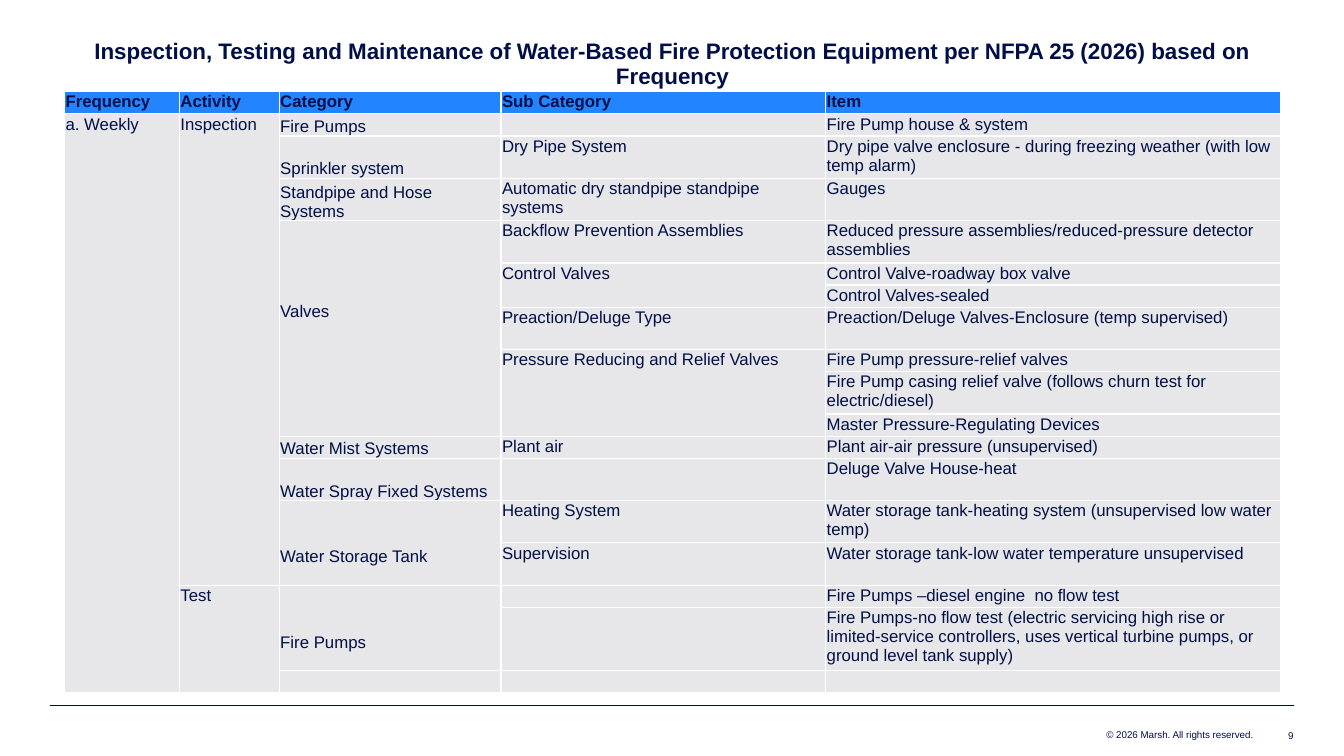
from lxml import etree
from pptx import Presentation
from pptx.dml.color import RGBColor
from pptx.enum.shapes import MSO_CONNECTOR
from pptx.enum.text import MSO_ANCHOR, PP_ALIGN
from pptx.oxml.ns import qn
from pptx.util import Emu, Pt

PX = 9144  # 100 px to the inch
LEFT, CENTER, RIGHT = PP_ALIGN.LEFT, PP_ALIGN.CENTER, PP_ALIGN.RIGHT
TOP, MIDDLE, BOTTOM = MSO_ANCHOR.TOP, MSO_ANCHOR.MIDDLE, MSO_ANCHOR.BOTTOM
STRAIGHT = MSO_CONNECTOR.STRAIGHT
COLORS = {"navy": "000F47", "blue": "2285FF", "gray": "E7E7E9", "white": "FFFFFF"}
FONT = "Arial"

TITLE = ("Inspection, Testing and Maintenance of Water-Based Fire Protection "
         "Equipment per NFPA 25 (2026) based on Frequency")
HEADS = ["Frequency", "Activity", "Category", "Sub Category", "Item"]
WIDTHS = [114, 99, 220, 322, 451]
HEIGHTS = {1: 22, 2: 42, 3: 63}  # row height by lines of text
TITLE_H = 55
LINE_H = 19
CAT_COL = 2

# Lines of text, then the five cells; None continues the cell above.
ROWS = [
    (1, "a. Weekly", "Inspection", "Fire Pumps", "", "Fire Pump house & system"),
    (2, None, None, "Sprinkler system", "Dry Pipe System",
     "Dry pipe valve enclosure - during freezing weather (with low temp alarm)"),
    (2, None, None, "Standpipe and Hose Systems",
     "Automatic dry standpipe standpipe systems", "Gauges"),
    (2, None, None, "Valves", "Backflow Prevention Assemblies",
     "Reduced pressure assemblies/reduced-pressure detector assemblies"),
    (1, None, None, None, "Control Valves", "Control Valve-roadway box valve"),
    (1, None, None, None, None, "Control Valves-sealed"),
    (2, None, None, None, "Preaction/Deluge Type",
     "Preaction/Deluge Valves-Enclosure (temp supervised)"),
    (1, None, None, None, "Pressure Reducing and Relief Valves",
     "Fire Pump pressure-relief valves"),
    (2, None, None, None, None,
     "Fire Pump casing relief valve (follows churn test for electric/diesel)"),
    (1, None, None, None, None, "Master Pressure-Regulating Devices"),
    (1, None, None, "Water Mist Systems", "Plant air",
     "Plant air-air pressure (unsupervised)"),
    (2, None, None, "Water Spray Fixed Systems", "", "Deluge Valve House-heat"),
    (2, None, None, "Water Storage Tank", "Heating System",
     "Water storage tank-heating system (unsupervised low water temp)"),
    (2, None, None, None, "Supervision",
     "Water storage tank-low water temperature unsupervised"),
    (1, None, "Test", "Fire Pumps", "", "Fire Pumps –diesel engine  no flow test"),
    (3, None, None, None, "",
     "Fire Pumps-no flow test (electric servicing high rise or limited-service "
     "controllers, uses vertical turbine pumps, or ground level tank supply)"),
    (1, None, None, "", "", ""),
]


def px(*sizes):
    return [Emu(size * PX) for size in sizes]


def color(name):
    return RGBColor.from_string(COLORS[name])


def write(frame, text, size=12, bold=False, align=LEFT):
    para = frame.paragraphs[0]
    para.alignment = align
    if not text:
        etree.SubElement(para._p, qn("a:endParaRPr"), sz=str(size * 100))
        return
    run = para.add_run()
    run.text = text
    run.font.name = FONT
    run.font.size = Pt(size)
    run.font.bold = bold
    run.font.color.rgb = color("navy")


def edge(cell):
    """Give the cell a white border on all sides."""
    props = cell._tc.get_or_add_tcPr()
    for spot, side in enumerate(("lnL", "lnR", "lnT", "lnB")):
        line = etree.Element(qn(f"a:{side}"), w=str(Pt(1)))
        fill = etree.SubElement(line, qn("a:solidFill"))
        etree.SubElement(fill, qn("a:srgbClr"), val=COLORS["white"])
        props.insert(spot, line)


def put(cell, text, fill=None, anchor=TOP, lift=0, **style):
    """Fill one cell; lift is the room kept below its text."""
    cell.margin_left, cell.margin_right, cell.margin_top, cell.margin_bottom = px(
        1, 1, 1, lift)
    cell.vertical_anchor = anchor
    if fill:
        cell.fill.solid()
        cell.fill.fore_color.rgb = color(fill)
    else:
        cell.fill.background()
    edge(cell)
    write(cell.text_frame, text, **style)


def reach(row, col):
    """Count the rows that the cell covers."""
    last = row + 1
    while last < len(ROWS) and ROWS[last][col + 1] is None:
        last += 1
    return last - row


def add_grid(slide, left, top):
    tall = [TITLE_H, HEIGHTS[1]] + [HEIGHTS[row[0]] for row in ROWS]
    frame = slide.shapes.add_table(
        len(tall), len(WIDTHS), *px(left, top, sum(WIDTHS), sum(tall)))
    table = frame.table
    table.first_row = table.horz_banding = False
    for column, width in zip(table.columns, px(*WIDTHS)):
        column.width = width
    for line, height in zip(table.rows, px(*tall)):
        line.height = height

    for col, head in enumerate(HEADS):
        put(table.cell(0, col), "" if col else TITLE, anchor=MIDDLE,
            size=16, bold=True, align=CENTER)
        put(table.cell(1, col), head, "blue", bold=True)
    table.cell(0, 0).merge(table.cell(0, len(HEADS) - 1))

    for row, (_, *texts) in enumerate(ROWS):
        for col, text in enumerate(texts):
            cell = table.cell(row + 2, col)
            span = 1 if text is None else reach(row, col)
            if col == CAT_COL:
                put(cell, text, "gray", BOTTOM, (span - 1) * LINE_H)
            else:
                put(cell, text, "gray")
            if span > 1:
                cell.merge(table.cell(row + 1 + span, col))


def add_note(slide, text, box, anchor):
    frame = slide.shapes.add_textbox(*px(*box)).text_frame
    frame.word_wrap = True
    frame.margin_left = frame.margin_right = 0
    frame.margin_top = frame.margin_bottom = 0
    frame.vertical_anchor = anchor
    write(frame, text, size=7, align=RIGHT)


def add_foot(slide, left, top, width):
    right = left + width
    rule = slide.shapes.add_connector(STRAIGHT, *px(left, top, right, top))
    rule.line.color.rgb = color("navy")
    rule.line.width = Pt(0.5)
    etree.SubElement(rule._element.spPr, qn("a:effectLst"))
    add_note(slide, "© 2026 Marsh. All rights reserved.",
             (right - 604, top + 22, 564, 13), BOTTOM)
    add_note(slide, "9", (right - 40, top + 24, 40, 12), MIDDLE)


def main():
    deck = Presentation()
    deck.slide_width, deck.slide_height = px(1333, 750)
    slide = deck.slides.add_slide(deck.slide_layouts[6])
    add_foot(slide, 50, 700, 1233)
    add_grid(slide, 64, 36)
    deck.save("out.pptx")


if __name__ == "__main__":
    main()
